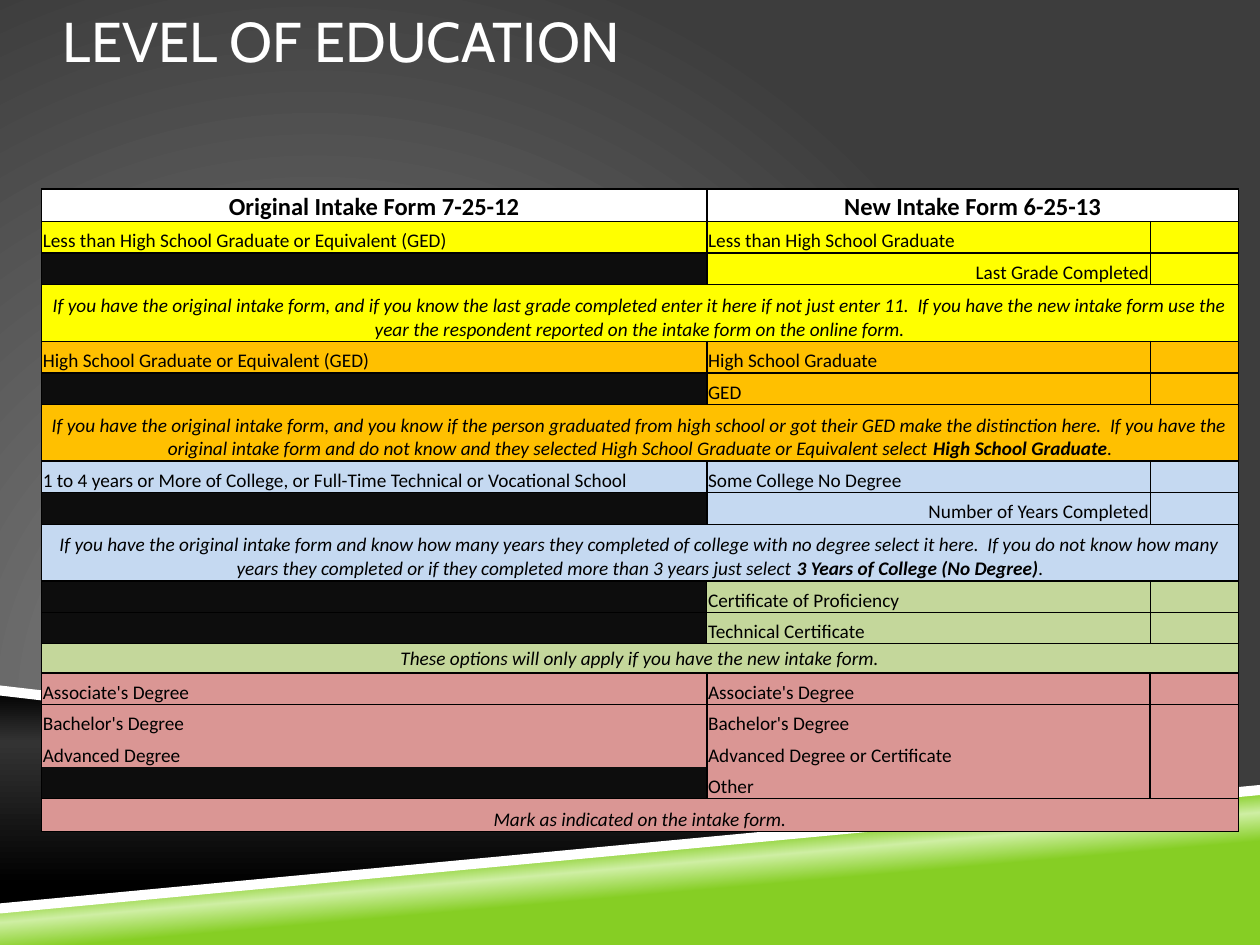
from lxml.etree import SubElement
from pptx import Presentation
from pptx.dml.color import RGBColor
from pptx.enum.text import MSO_ANCHOR as Anchor, PP_ALIGN as Align
from pptx.oxml import parse_xml
from pptx.oxml.ns import nsdecls, qn
from pptx.util import Inches, Pt

WIDTH, HEIGHT = 10, 7.5
BLACK, WHITE, SHADE = "000000", "FFFFFF", "0D0D0D"
THIN, MEDIUM, THICK = 0.5, 1, 1.5
COLUMNS = [5.28, 0.7, 2.82, 0.7]
LAST = len(COLUMNS) - 1
PLAIN_STYLE = "{2D5ABB26-0587-4C30-8999-92F81FD0307C}"
HEADINGS = ["Original Intake Form 7-25-12", "New Intake Form 6-25-13"]
LEFT, RIGHT = Align.LEFT, Align.RIGHT

GROUPS = [
    dict(color="FFFF00", divider=MEDIUM, note_height=0.45,
         answers=[("Less than High School Graduate or Equivalent (GED)",
                   "Less than High School Graduate", LEFT),
                  ("", "Last Grade Completed", RIGHT)],
         note="If you have the original intake form, and if you know the last grade "
              "completed enter it here if not just enter 11.  If you have the new intake "
              "form use the year the respondent reported on the intake form on the online form."),
    dict(color="FFC000", divider=MEDIUM, note_height=0.45,
         answers=[("High School Graduate or Equivalent (GED)", "High School Graduate", LEFT),
                  ("", "GED", LEFT)],
         note="If you have the original intake form, and you know if the person graduated "
              "from high school or got their GED make the distinction here.  If you have the "
              "original intake form and do not know and they selected High School Graduate "
              "or Equivalent select *High School Graduate*."),
    dict(color="C5D9F1", divider=MEDIUM, note_height=0.45,
         answers=[("1 to 4 years or More of College, or Full-Time Technical or Vocational School",
                   "Some College No Degree", LEFT),
                  ("", "Number of Years Completed", RIGHT)],
         note="If you have the original intake form and know how many years they completed "
              "of college with no degree select it here.  If you do not know how many years "
              "they completed or if they completed more than 3 years just select "
              "*3 Years of College (No Degree)*."),
    dict(color="C4D79B", divider=THIN, note_height=0.23, anchor=Anchor.MIDDLE,
         answers=[("", "Certificate of Proficiency", LEFT),
                  ("", "Technical Certificate", LEFT)],
         note="These options will only apply if you have the new intake form."),
    dict(color="DA9694", divider=THICK, note_height=0.26,
         answers=[("Associate's Degree", "Associate's Degree", LEFT),
                  ("Bachelor's Degree", "Bachelor's Degree", LEFT),
                  ("Advanced Degree", "Advanced Degree or Certificate", LEFT),
                  ("", "Other", LEFT)],
         note="Mark as indicated on the intake form."),
]


def rgb(value):
    return RGBColor.from_string(value)


def apply(target, values):
    for name, value in values.items():
        setattr(target, name, value)


def paint_gradient(element, stops, direction):
    marks = "".join(f'<a:gs pos="{share * 1000}"><a:srgbClr val="{color}"/></a:gs>'
                    for share, color in stops)
    solid = next(element.iter(qn("a:solidFill")))
    solid.getparent().replace(solid, parse_xml(
        f'<a:gradFill rotWithShape="1" {nsdecls("a")}><a:gsLst>{marks}</a:gsLst>'
        f'{direction}</a:gradFill>'))


def linear(angle):
    return f'<a:lin ang="{angle * 60000}" scaled="0"/>'


def paint_background(page):
    fill = page.background.fill
    fill.solid()
    fill.fore_color.rgb = rgb(BLACK)
    paint_gradient(page._element, [(0, "878787"), (100, "3D3D3D")],
                   '<a:path path="circle"><a:fillToRect l="50000" t="100000" '
                   'r="100000" b="50000"/></a:path>')


def add_band(page, points, color=WHITE, stops=None, angle=0):
    start, *rest = [(Inches(x), Inches(y)) for x, y in points]
    builder = page.shapes.build_freeform(*start)
    builder.add_line_segments(rest, close=True)
    band = builder.convert_to_shape()
    band.shadow.inherit = False
    band.line.fill.background()
    band.fill.solid()
    band.fill.fore_color.rgb = rgb(color)
    if stops:
        paint_gradient(band._element, stops, linear(angle))


def add_title(page, text):
    box = page.shapes.add_textbox(Inches(WIDTH * 0.05), 0, Inches(WIDTH * 0.9), Inches(HEIGHT / 6))
    apply(box.text_frame, dict(word_wrap=True, margin_left=0, margin_right=0,
                               vertical_anchor=Anchor.TOP))
    span = box.text_frame.paragraphs[0].add_run()
    span.text = text
    apply(span.font, dict(name="Cabin", size=Pt(32)))
    span.font.color.rgb = rgb(WHITE)


def set_borders(cell, borders):
    properties = cell._tc.get_or_add_tcPr()
    for side in "LRTB":
        if side in borders:
            line = SubElement(properties, qn(f"a:ln{side}"), w=str(Pt(borders[side])))
            SubElement(SubElement(line, qn("a:solidFill")), qn("a:srgbClr"), val=BLACK)


def write_cell(cell, text, color, borders, align=LEFT, anchor=Anchor.BOTTOM,
               size=11, bold=False, italic=False):
    set_borders(cell, borders)
    cell.fill.solid()
    cell.fill.fore_color.rgb = rgb(color)
    cell.vertical_anchor = anchor
    para = cell.text_frame.paragraphs[0]
    para.alignment = align
    for index, part in enumerate(text.split("*")):
        if part:
            span = para.add_run()
            span.text = part
            apply(span.font, dict(name="Calibri", size=Pt(size), italic=italic,
                                  bold=bold or index % 2 == 1))
            span.font.color.rgb = rgb(BLACK)


def add_grid(page):
    heights = [0.26]
    for group in GROUPS:
        heights += [0.25] * len(group["answers"]) + [group["note_height"]]
    frame = page.shapes.add_table(len(heights), len(COLUMNS), Inches(0.33), Inches(1.5),
                                  Inches(sum(COLUMNS)), Inches(sum(heights)))
    grid = frame.table
    apply(grid, dict(first_row=False, horz_banding=False))
    grid._tbl.tblPr.find(qn("a:tableStyleId")).text = PLAIN_STYLE
    for column, width in zip(grid.columns, COLUMNS):
        column.width = Inches(width)
    for row, height in zip(grid.rows, heights):
        row.height = Inches(height)
    for cell in grid.iter_cells():
        apply(cell, dict(margin_left=Inches(0.01), margin_right=Inches(0.01),
                         margin_top=Inches(0.01), margin_bottom=0))
        SubElement(cell.text_frame.paragraphs[0]._p, qn("a:endParaRPr"), sz="1100")
    return grid


def join_cells(grid, row, first, last):
    grid.cell(row, first).merge(grid.cell(row, last))
    return grid.cell(row, first)


def fill_headings(grid):
    frame = dict.fromkeys("LRTB", MEDIUM)
    cells = [grid.cell(0, 0), join_cells(grid, 0, 1, LAST)]
    for cell, text in zip(cells, HEADINGS):
        write_cell(cell, text, WHITE, frame, Align.CENTER, size=14, bold=True)


def fill_group(grid, row, group):
    color, divider, answers = group["color"], group["divider"], group["answers"]
    for index, (old, new, align) in enumerate(answers):
        edges = {}
        if index == 0:
            edges["T"] = MEDIUM
        if index == len(answers) - 1:
            edges["B"] = THIN
        write_cell(grid.cell(row, 0), old, color if old else SHADE,
                   dict(edges, L=MEDIUM, R=divider))
        write_cell(join_cells(grid, row, 1, 2), new, color, dict(edges, L=divider), align)
        write_cell(grid.cell(row, LAST), "", color, dict(edges, R=MEDIUM))
        row += 1
    write_cell(join_cells(grid, row, 0, LAST), group["note"], color,
               dict(L=MEDIUM, R=MEDIUM, T=THIN, B=MEDIUM), Align.CENTER,
               group.get("anchor", Anchor.BOTTOM), italic=True)
    return row + 1


def main():
    deck = Presentation()
    apply(deck, dict(slide_width=Inches(WIDTH), slide_height=Inches(HEIGHT)))
    page = deck.slides.add_slide(deck.slide_layouts[6])
    paint_background(page)
    add_band(page, [(0, 5.48), (8.14, 6.43), (0, 7.2)],
             stops=[(0, BLACK), (24, "333333"), (90, BLACK)], angle=90)
    add_band(page, [(0, 7.21), (WIDTH, 6.27), (WIDTH, HEIGHT), (0, HEIGHT)],
             stops=[(39, "86CE24"), (50, "CFEFA4"), (58, "86CE24")], angle=265)
    add_band(page, [(0, 5.44), (0, 5.52), (7.98, 6.45), (8.39, 6.42)])
    add_band(page, [(WIDTH, 6.23), (0, 7.17), (0, 7.25), (WIDTH, 6.31)])
    add_title(page, "LEVEL OF EDUCATION")
    grid = add_grid(page)
    fill_headings(grid)
    row = 1
    for group in GROUPS:
        row = fill_group(grid, row, group)
    deck.save("out.pptx")


if __name__ == "__main__":
    main()
